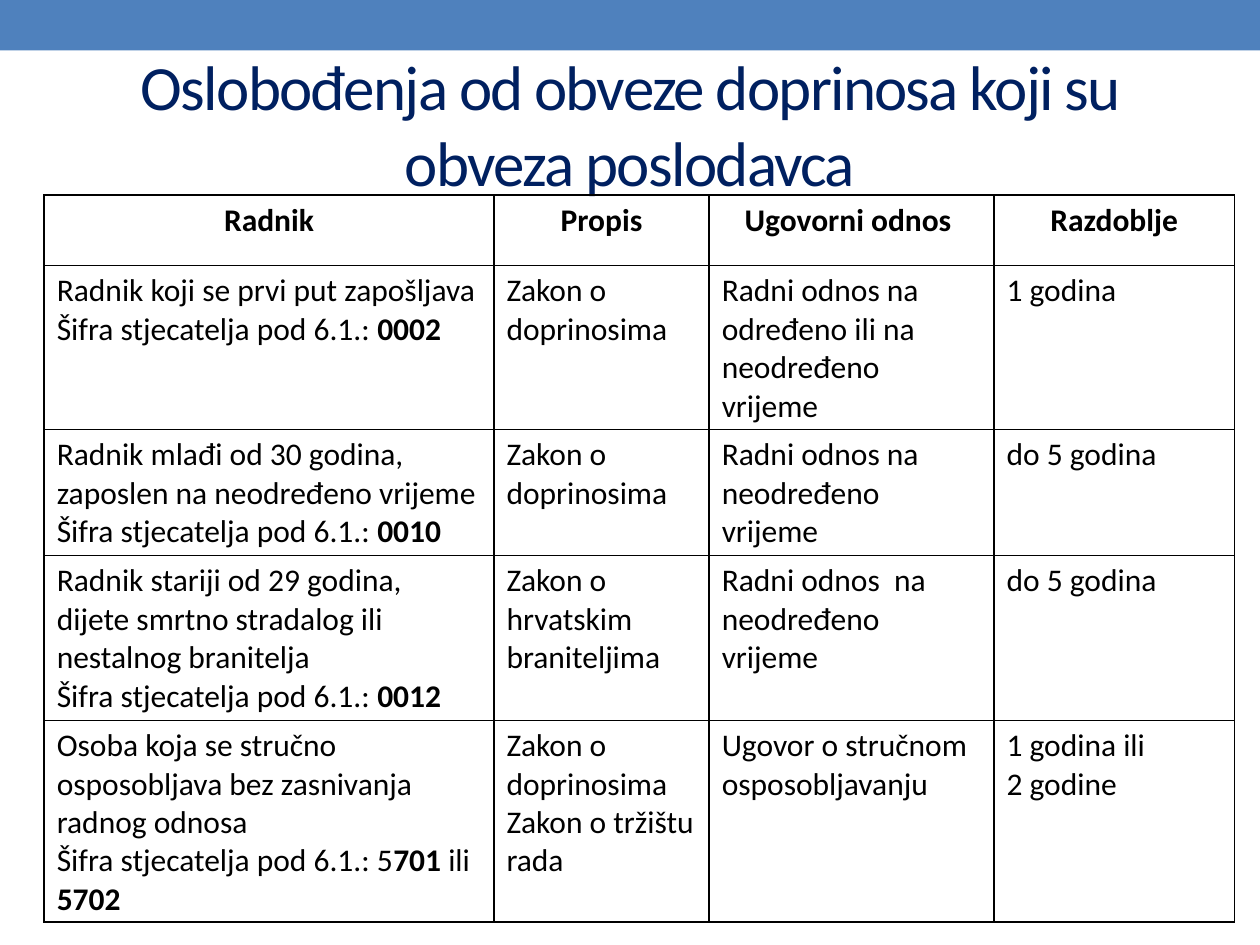
import pptx
import pptx.dml.color
import pptx.enum.shapes
import pptx.enum.text
import pptx.oxml
import pptx.oxml.ns
import pptx.util
from dataclasses import dataclass

Pt = pptx.util.Pt
ALIGN = pptx.enum.text.PP_ALIGN


@dataclass(frozen=True)
class Theme:
    font: str = "Calibri"
    band: str = "4F81BD"
    title: str = "002060"
    ink: str = "000000"
    title_size: int = 36
    body_size: int = 18
    border: int = 1


THEME = Theme()
COLUMN_WIDTHS = (257, 123, 162.75, 137.5)
ROW_HEIGHTS = (40.25, 88.5, 70.5, 94.25, 108.75)
CODE = "Šifra stjecatelja pod 6.1.: "
ROWS = (
    ("**Radnik**", "**Propis**", "**Ugovorni odnos **", "**Razdoblje**"),
    (f"Radnik koji se prvi put zapošljava\n{CODE}**0002**",
     "Zakon o doprinosima",
     "Radni odnos na određeno ili na neodređeno vrijeme",
     "1 godina"),
    (f"Radnik mlađi od 30 godina, zaposlen na neodređeno vrijeme\n{CODE}**0010**",
     "Zakon o doprinosima",
     "Radni odnos na neodređeno vrijeme",
     "do 5 godina"),
    (f"Radnik stariji od 29 godina, dijete smrtno stradalog ili nestalnog branitelja\n{CODE}**0012**",
     "Zakon o hrvatskim braniteljima",
     "Radni odnos  na neodređeno vrijeme",
     "do 5 godina"),
    (f"Osoba koja se stručno osposobljava bez zasnivanja radnog odnosa\n{CODE}5**701** ili **5702**",
     "Zakon o doprinosima\nZakon o tržištu rada",
     "Ugovor o stručnom osposobljavanju",
     "1 godina ili\n2 godine"),
)


def color(value):
    return pptx.dml.color.RGBColor.from_string(value)


def style_font(font, size, ink):
    font.name = THEME.font
    font.size = Pt(size)
    font.color.rgb = color(ink)


def add_band(page, width):
    band = page.shapes.add_shape(
        pptx.enum.shapes.MSO_SHAPE.RECTANGLE, 0, 0, width, Pt(28.8))
    band.shadow.inherit = False
    band.fill.solid()
    band.fill.fore_color.rgb = color(THEME.band)
    band.line.fill.background()


def add_title(page, text):
    box = page.shapes.add_textbox(Pt(36), Pt(42), Pt(648), Pt(57))
    frame = box.text_frame
    frame.word_wrap = True
    frame.vertical_anchor = pptx.enum.text.MSO_ANCHOR.MIDDLE
    frame.text = text
    para = frame.paragraphs[0]
    para.alignment = ALIGN.CENTER
    span = para.runs[0]
    style_font(span.font, THEME.title_size, THEME.title)
    span.font._element.set("spc", "-100")


def add_borders(cell):
    properties = cell._tc.get_or_add_tcPr()
    for side in ("lnL", "lnR", "lnT", "lnB"):
        properties.append(pptx.oxml.parse_xml(
            f'<a:{side} {pptx.oxml.ns.nsdecls("a")} w="{Pt(THEME.border)}">'
            f'<a:solidFill><a:srgbClr val="{THEME.ink}"/></a:solidFill></a:{side}>'))


def fill_cell(cell, text, alignment):
    add_borders(cell)
    cell.fill.background()
    frame = cell.text_frame
    for index, line in enumerate(text.split("\n")):
        para = frame.add_paragraph() if index else frame.paragraphs[0]
        para.alignment = alignment
        for position, part in enumerate(line.split("**")):
            if part:
                span = para.add_run()
                span.text = part
                style_font(span.font, THEME.body_size, THEME.ink)
                span.font.bold = position % 2 == 1


def add_grid(page):
    table = page.shapes.add_table(
        len(ROWS), len(COLUMN_WIDTHS), Pt(25.25), Pt(111.5),
        Pt(sum(COLUMN_WIDTHS)), Pt(sum(ROW_HEIGHTS))).table
    table.first_row = False
    table.horz_banding = False
    for column, width in zip(table.columns, COLUMN_WIDTHS):
        column.width = Pt(width)
    for index, (row, height, texts) in enumerate(zip(table.rows, ROW_HEIGHTS, ROWS)):
        row.height = Pt(height)
        alignment = ALIGN.LEFT if index else ALIGN.CENTER
        for cell, text in zip(row.cells, texts):
            fill_cell(cell, text, alignment)


def main():
    deck = pptx.Presentation()
    deck.slide_width, deck.slide_height = Pt(720), Pt(540)
    page = deck.slides.add_slide(deck.slide_layouts[6])
    add_band(page, deck.slide_width)
    add_title(page, "Oslobođenja od obveze doprinosa koji su obveza poslodavca")
    add_grid(page)
    deck.save("out.pptx")


if __name__ == "__main__":
    main()
